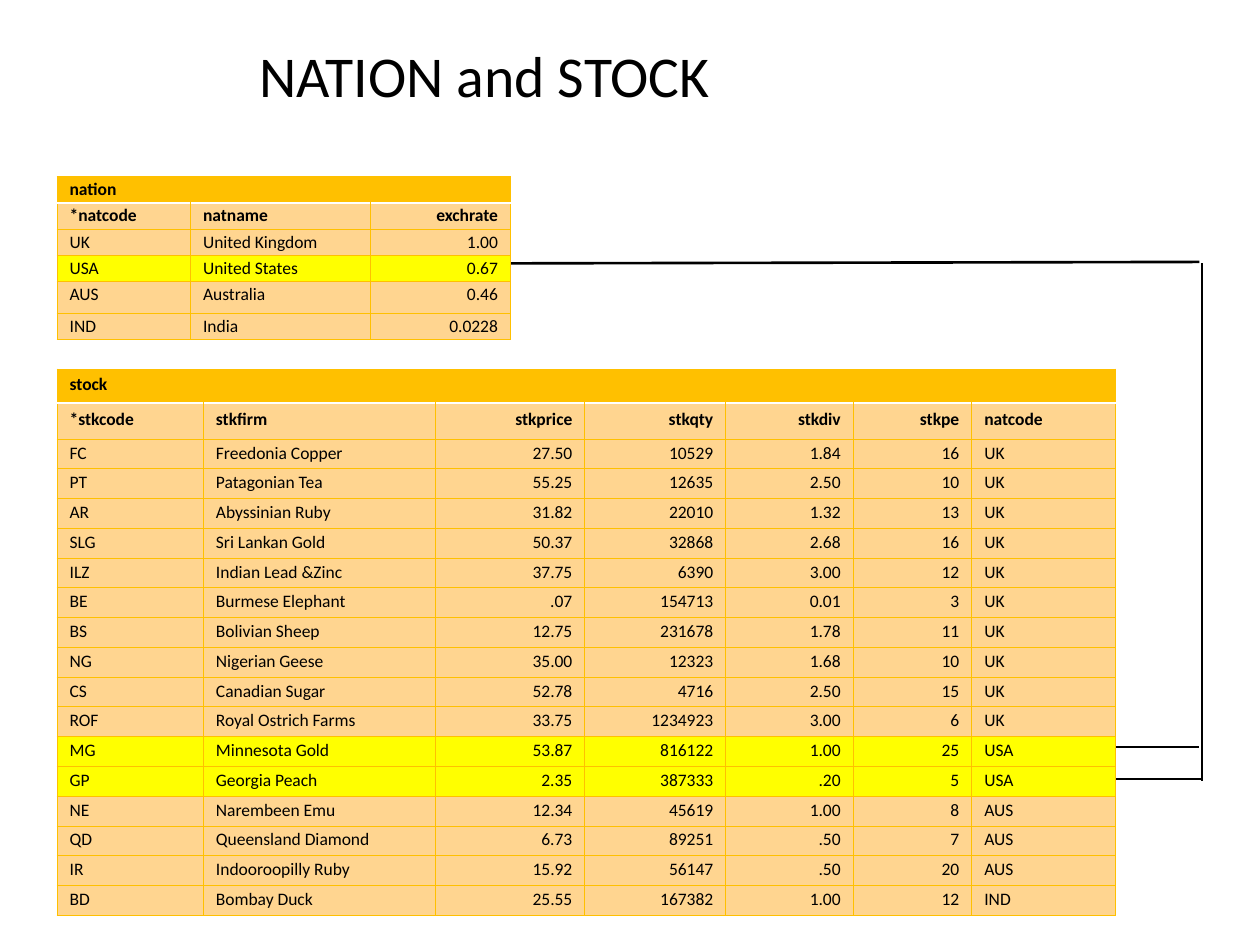
from lxml.etree import SubElement as Sub
from pptx import Presentation
from pptx.dml.color import RGBColor
from pptx.enum.shapes import MSO_CONNECTOR as Link
from pptx.enum.text import MSO_ANCHOR as Anchor, PP_ALIGN as Align
from pptx.oxml.ns import qn
from pptx.util import Cm, Pt

BLACK = RGBColor(0x00, 0x00, 0x00)
WHITE = RGBColor(0xFF, 0xFF, 0xFF)
GOLD = RGBColor(0xFF, 0xC0, 0x00)
PEACH = RGBColor(0xFF, 0xD5, 0x90)
YELLOW = RGBColor(0xFF, 0xFF, 0x00)

NATION = """*natcode|natname|exchrate
UK|United Kingdom|1.00
USA|United States|0.67
AUS|Australia|0.46
IND|India|0.0228"""

STOCK = """*stkcode|stkfirm|stkprice|stkqty|stkdiv|stkpe|natcode
FC|Freedonia Copper|27.50|10529|1.84|16|UK
PT|Patagonian Tea|55.25|12635|2.50|10|UK
AR|Abyssinian Ruby|31.82|22010|1.32|13|UK
SLG|Sri Lankan Gold|50.37|32868|2.68|16|UK
ILZ|Indian Lead &Zinc|37.75|6390|3.00|12|UK
BE|Burmese Elephant|.07|154713|0.01|3|UK
BS|Bolivian Sheep|12.75|231678|1.78|11|UK
NG|Nigerian Geese|35.00|12323|1.68|10|UK
CS|Canadian Sugar|52.78|4716|2.50|15|UK
ROF|Royal Ostrich Farms|33.75|1234923|3.00|6|UK
MG|Minnesota Gold|53.87|816122|1.00|25|USA
GP|Georgia Peach|2.35|387333|.20|5|USA
NE|Narembeen Emu|12.34|45619|1.00|8|AUS
QD|Queensland Diamond|6.73|89251|.50|7|AUS
IR|Indooroopilly Ruby|15.92|56147|.50|20|AUS
BD|Bombay Duck|25.55|167382|1.00|12|IND"""


class Deck:
    font = "Calibri"

    def __init__(self, wide, high):
        self.file = Presentation()
        self.file.slide_width = Cm(wide)
        self.file.slide_height = Cm(high)
        self.slide = self.file.slides.add_slide(self.file.slide_layouts[6])

    def style(self, para, size, bold=False):
        for run in para.runs:
            run.font.name = self.font
            run.font.size = Pt(size)
            run.font.bold = bold
            run.font.color.rgb = BLACK

    def title(self, text, left, top, wide, high):
        frame = self.slide.shapes.add_textbox(
            Cm(left), Cm(top), Cm(wide), Cm(high)).text_frame
        frame.word_wrap = True
        frame.vertical_anchor = Anchor.MIDDLE
        frame.text = text
        para = frame.paragraphs[0]
        para.line_spacing = 0.9
        self.style(para, 33)

    def line(self, x1, y1, x2, y2):
        link = self.slide.shapes.add_connector(
            Link.STRAIGHT, Cm(x1), Cm(y1), Cm(x2), Cm(y2))
        link.line.color.rgb = BLACK
        link.line.width = Pt(1.5)
        Sub(link._element.spPr, qn("a:effectLst"))

    def border(self, cell, side, color, width):
        edge = Sub(cell._tc.get_or_add_tcPr(), qn("a:ln" + side), w=str(Pt(width)))
        fill = Sub(edge, qn("a:solidFill"))
        Sub(fill, qn("a:srgbClr"), val=str(color))

    def cell(self, cell, row, fill):
        for side in "LRTB":
            seam = (row, side) in ((0, "B"), (1, "T"))
            self.border(cell, side, WHITE if seam else GOLD, 1 if seam else 0.5)
        cell.fill.solid()
        cell.fill.fore_color.rgb = fill

    def table(self, name, data, left, top, cols, rows, pad, right, lead, tight):
        lines = [[name] + [""] * (len(cols) - 1)]
        lines += [line.split("|") for line in data.splitlines()]
        grid = self.slide.shapes.add_table(
            len(rows), len(cols), Cm(left), Cm(top),
            Cm(sum(cols)), Cm(sum(rows))).table
        grid.first_row = grid.horz_banding = False
        for col, wide in zip(grid.columns, cols):
            col.width = Cm(wide)
        for row, high in zip(grid.rows, rows):
            row.height = Cm(high)
        for r, line in enumerate(lines):
            fill = GOLD if r == 0 else YELLOW if "USA" in line else PEACH
            for c, text in enumerate(line):
                cell = grid.cell(r, c)
                self.cell(cell, r, fill)
                cell.margin_top = cell.margin_bottom = Cm(pad)
                cell.text_frame.text = text
                para = cell.text_frame.paragraphs[0]
                para.space_before = Pt(5)
                para.line_spacing = (lead, 1.0)[r] if r < 2 else tight
                if r and c in right:
                    para.alignment = Align.RIGHT
                self.style(para, 10, r < 2)
        grid.cell(0, 0).merge(grid.cell(0, len(cols) - 1))

    def save(self):
        self.file.save("out.pptx")


def main():
    deck = Deck(25.4, 19.05)
    deck.title("NATION and STOCK", 4.98, 0, 15.42, 3.18)
    deck.line(24.18, 5.28, 10.29, 5.31)
    deck.table("nation", NATION, 1.15, 3.56, [2.69, 3.63, 2.82],
               [0.53] * 4 + [0.63, 0.53], 0.05, {2}, 1.0, 1.0)
    deck.table("stock", STOCK, 1.15, 7.44,
               [2.95, 4.67, 3.02, 2.84, 2.57, 2.39, 2.9],
               [0.68, 0.73] + [0.6] * 16, 0.13, {2, 3, 4, 5}, 0.88, 0.8)
    deck.line(22.5, 15.06, 24.18, 15.06)
    deck.line(22.5, 15.7, 24.23, 15.7)
    deck.line(24.23, 5.31, 24.23, 15.75)
    deck.save()


if __name__ == "__main__":
    main()
